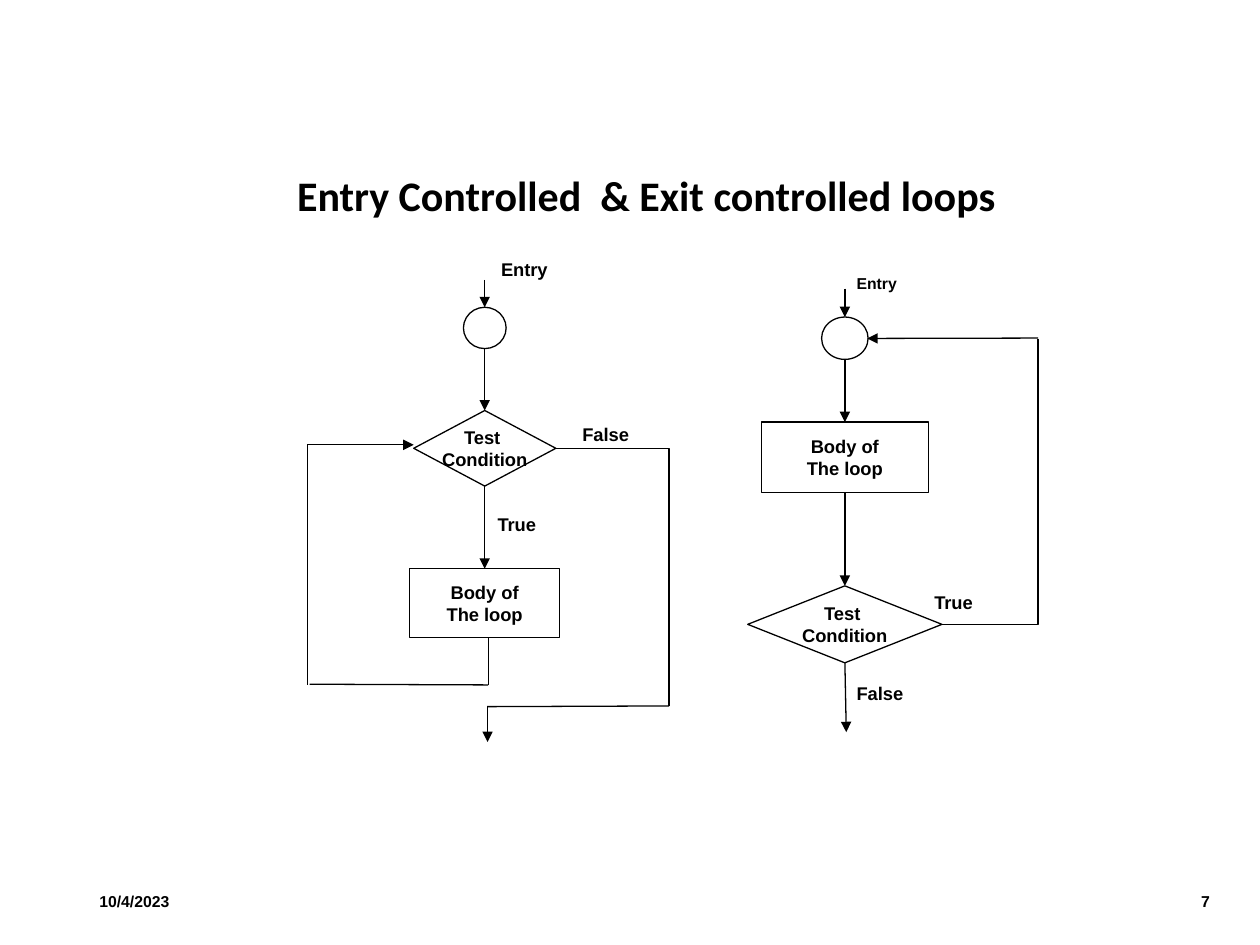
from dataclasses import dataclass
from lxml.etree import SubElement as Sub
from pptx import Presentation
from pptx.dml.color import RGBColor as Rgb
from pptx.enum.shapes import MSO_CONNECTOR as Conn, MSO_SHAPE as Kind
from pptx.enum.text import MSO_ANCHOR as Anchor, MSO_AUTO_SIZE as Fit, PP_ALIGN as Align
from pptx.oxml.ns import qn
from pptx.util import Pt


@dataclass(frozen=True)
class Theme:
    ink: Rgb = Rgb(0, 0, 0)
    paper: Rgb = Rgb(255, 255, 255)
    head: str = "Calibri"
    body: str = "Arial"
    large: float = 24
    label: float = 10.5
    small: float = 9
    rule: float = 0.75


LOOK = Theme()
TITLE = "Entry Controlled  & Exit controlled loops"
TITLE_BOX = (157.7, 92.9, 423.4, 40.3)
FOOT = [
    ("10/4/2023", (49.7, 500.4, 68.4, 28.8), Align.LEFT),
    ("7", (670.3, 500.4, 28.1, 28.8), Align.RIGHT),
]
KINDS = {
    "ring": (Kind.FLOWCHART_CONNECTOR, ""),
    "test": (Kind.FLOWCHART_DECISION, "Test \nCondition"),
    "body": (Kind.FLOWCHART_PROCESS, "Body of\nThe loop"),
}
TOP, BASE = 0, 2

EXIT = {
    "axis": 482.8,
    "nodes": {
        "ring": (181.2, 26.6, 24.2),
        "body": (241.2, 95.4, 40.4),
        "test": (334.8, 111, 44),
    },
    "labels": [
        ("Entry", (482.4, 152.8, 55.4, 18), LOOK.small),
        ("True", (526.8, 334.2, 37.4, 20.2), LOOK.label),
        ("False", (482.4, 386.4, 41.8, 20.2), LOOK.label),
    ],
    "lines": [
        ((482.8, 165), ("ring", TOP), True),
        ((482.8, 205.4), ("body", TOP), True),
        (("body", BASE), ("test", TOP), True),
        (("test", BASE), (483.6, 418.4), True),
        ((593.2, 193.2), (495.6, 193.4), True),
    ],
    "bend": ((538.3, 356.8), (593.2, 193.6)),
}
ENTRY = {
    "axis": 277,
    "nodes": {
        "ring": (175.6, 24.4, 23.6),
        "test": (234.6, 81.2, 43.2),
        "body": (325, 85.6, 39.4),
    },
    "labels": [
        ("Entry", (279.2, 144.2, 41.8, 20.2), LOOK.label),
        ("True", (277.2, 289.6, 37.4, 20.2), LOOK.label),
        ("False", (325.7, 238.3, 41.8, 20.2), LOOK.label),
    ],
    "lines": [
        ((277, 160), ("ring", TOP), True),
        ((277, 199.2), ("test", TOP), True),
        (("test", BASE), ("body", TOP), True),
        ((279, 364.4), (279, 391.4), False),
        ((279, 391.4), (177, 391), False),
        ((175.6, 391.4), (175.6, 254.2), False),
        ((175.6, 254.2), (236.4, 254.2), True),
        ((382.4, 403.4), (278.4, 403.8), False),
        ((278.6, 403.8), (278.6, 424), True),
    ],
    "bend": ((317.6, 256.2), (382.4, 403.4)),
}


def write(shape, text, font=LOOK.body, size=LOOK.label, align=Align.LEFT,
          anchor=Anchor.TOP, wrap=True, space=None):
    frame = shape.text_frame
    frame.text = text
    frame.auto_size = Fit.NONE
    frame.word_wrap = wrap
    frame.vertical_anchor = anchor
    for para in frame.paragraphs:
        para.alignment = align
        para.line_spacing = space
        for run in para.runs:
            run.font.name = font
            run.font.size = Pt(size)
            run.font.bold = True
            run.font.color.rgb = LOOK.ink


def place(box):
    return [Pt(v) for v in box]


def ink(line):
    line.color.rgb = LOOK.ink
    line.width = Pt(LOOK.rule)


def add_node(group, name, axis, top, wide, high):
    kind, text = KINDS[name]
    node = group.shapes.add_shape(kind, *place((axis - wide / 2, top, wide, high)))
    node.shadow.inherit = False
    node.fill.solid()
    node.fill.fore_color.rgb = LOOK.paper
    ink(node.line)
    if text:
        write(node, text, align=Align.CENTER, anchor=Anchor.MIDDLE, wrap=False)
    return node


def spot(end, nodes):
    if end[0] in nodes:
        node = nodes[end[0]]
        return node.left + node.width // 2, node.top + node.height // 2
    return place(end)


def add_line(group, start, stop, nodes, arrow=False, kind=Conn.STRAIGHT):
    line = group.shapes.add_connector(kind, *spot(start, nodes), *spot(stop, nodes))
    if start[0] in nodes:
        line.begin_connect(nodes[start[0]], start[1])
    if stop[0] in nodes:
        line.end_connect(nodes[stop[0]], stop[1])
    ink(line.line)
    if arrow:
        Sub(line.line._get_or_add_ln(), qn("a:tailEnd"), type="triangle")
    Sub(line._element.spPr, qn("a:effectLst"))
    return line


def add_flow(slide, flow):
    group = slide.shapes.add_group_shape()
    nodes = {name: add_node(group, name, flow["axis"], *size)
             for name, size in flow["nodes"].items()}
    for start, stop, arrow in flow["lines"]:
        add_line(group, start, stop, nodes, arrow)
    bend = add_line(group, *flow["bend"], nodes, kind=Conn.ELBOW)
    bend._element.spPr.find(qn("a:prstGeom")).set("prst", "bentConnector2")
    for text, box, size in flow["labels"]:
        write(group.shapes.add_textbox(*place(box)), text, size=size, wrap=False)


def main():
    deck = Presentation()
    deck.slide_width, deck.slide_height = Pt(720), Pt(540)
    slide = deck.slides.add_slide(deck.slide_layouts[5])
    title = slide.shapes.title
    title.left, title.top, title.width, title.height = place(TITLE_BOX)
    write(title, TITLE, font=LOOK.head, size=LOOK.large, align=Align.CENTER,
          anchor=Anchor.MIDDLE, space=0.9)
    for text, box, align in FOOT:
        write(slide.shapes.add_textbox(*place(box)), text, size=LOOK.small,
              align=align, anchor=Anchor.MIDDLE)
    for flow in (EXIT, ENTRY):
        add_flow(slide, flow)
    deck.save("out.pptx")


if __name__ == "__main__":
    main()
